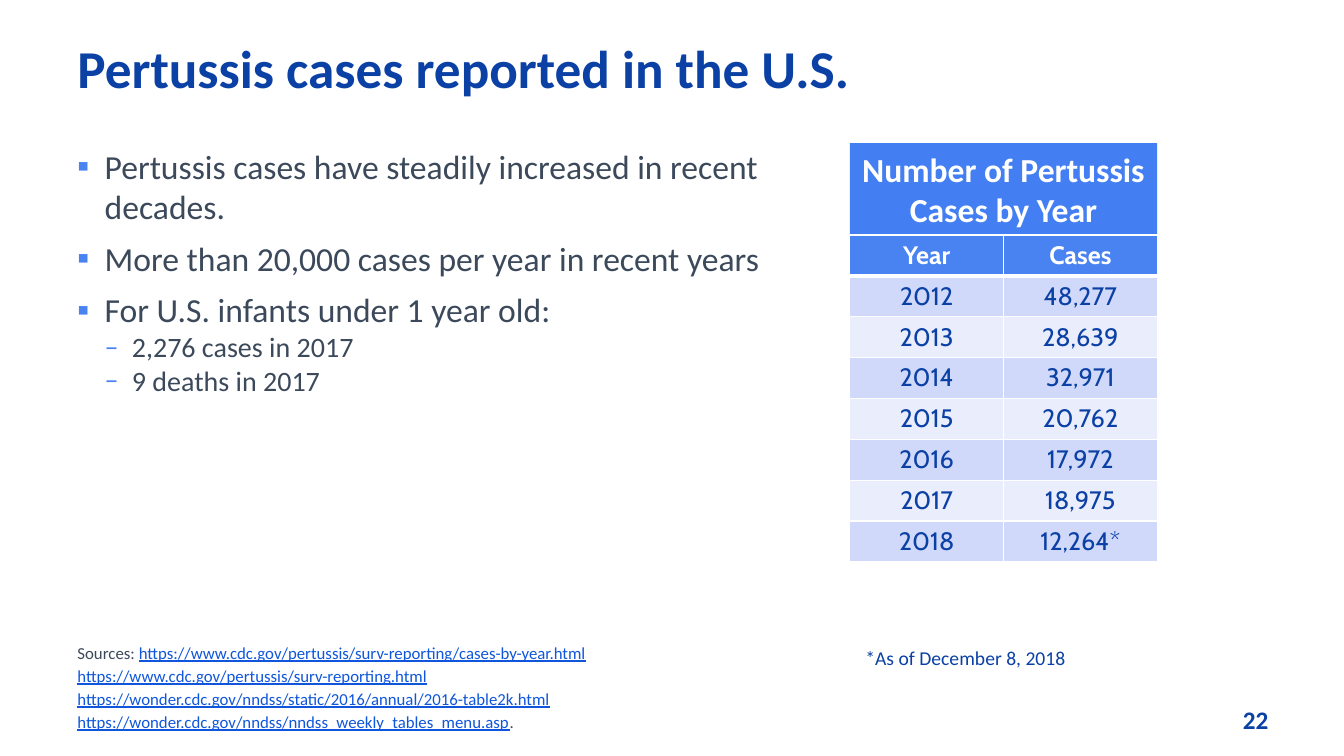
from pptx import Presentation
from pptx.dml.color import RGBColor
from pptx.enum.shapes import MSO_SHAPE
from pptx.enum.text import MSO_ANCHOR, PP_ALIGN
from pptx.oxml import parse_xml
from pptx.oxml.ns import nsdecls
from pptx.util import Pt

NAVY = RGBColor(0x0B, 0x40, 0xA5)
SLATE = RGBColor(0x3B, 0x49, 0x5B)
LINK = RGBColor(0x0F, 0x56, 0xDC)
BAND = RGBColor(0x43, 0x7F, 0xF2)
BLUE = RGBColor(0x49, 0x83, 0xF2)
DARK = RGBColor(0xD0, 0xD9, 0xFA)
PALE = RGBColor(0xE9, 0xED, 0xFC)
WHITE = RGBColor(0xFF, 0xFF, 0xFF)

POINTS = [
    (0, "Pertussis cases have steadily increased in recent decades."),
    (0, "More than 20,000 cases per year in recent years"),
    (0, "For U.S. infants under 1 year old:"),
    (1, "2,276 cases in 2017"),
    (1, "9 deaths in 2017"),
]
SOURCES = [
    ("Sources: ", "https://www.cdc.gov/pertussis/surv-reporting/cases-by-year.html", ""),
    ("", "https://www.cdc.gov/pertussis/surv-reporting.html", ""),
    ("", "https://wonder.cdc.gov/nndss/static/2016/annual/2016-table2k.html", ""),
    ("", "https://wonder.cdc.gov/nndss/nndss_weekly_tables_menu.asp", "."),
]
CASES = [
    ("Year", "Cases"),
    ("2012", "48,277"),
    ("2013", "28,639"),
    ("2014", "32,971"),
    ("2015", "20,762"),
    ("2016", "17,972"),
    ("2017", "18,975"),
    ("2018", "12,264*"),
]


def style(run, size, color, bold=False, face="Calibri"):
    font = run.font
    font.name, font.size, font.bold = face, Pt(size), bold
    font.color.rgb = color


def add_box(slide, x, y, w, h):
    frame = slide.shapes.add_textbox(Pt(x), Pt(y), Pt(w), Pt(h)).text_frame
    frame.word_wrap = True
    return frame


def add_line(slide, box, text, size, color, bold=False, align=PP_ALIGN.LEFT):
    frame = add_box(slide, *box)
    frame.text = text
    para = frame.paragraphs[0]
    para.alignment = align
    style(para.runs[0], size, color, bold)


def add_bullet(para, level):
    props = para._p.get_or_add_pPr()
    props.set("marL", str(Pt(19.44 * (level + 1))))
    props.set("indent", str(-Pt(19.44)))
    for tag in (
        f'<a:buClr {nsdecls("a")}><a:srgbClr val="{BLUE}"/></a:buClr>',
        f'<a:buFont {nsdecls("a")} typeface="Calibri"/>',
        f'<a:buChar {nsdecls("a")} char="{"▪–"[level]}"/>',
    ):
        props.append(parse_xml(tag))


def add_points(slide, x, y, w, h):
    frame = add_box(slide, x, y, w, h)
    for i, (level, text) in enumerate(POINTS):
        para = frame.add_paragraph() if i else frame.paragraphs[0]
        para.text, para.level = text, level
        para.space_before = Pt(8 if i and not level else 0)
        add_bullet(para, level)
        style(para.runs[0], 20 if level else 24, SLATE)


def add_sources(slide, x, y, w, h):
    frame = add_box(slide, x, y, w, h)
    for i, parts in enumerate(SOURCES):
        para = frame.add_paragraph() if i else frame.paragraphs[0]
        para.space_before = Pt(2 if i else 0)
        for text in filter(None, parts):
            run = para.add_run()
            run.text = text
            link = text.startswith("https")
            style(run, 12, LINK if link else SLATE)
            run.font.underline = link


def add_edges(cell, row):
    props = cell._tc.get_or_add_tcPr()
    heavy = {"lnB": row == 0, "lnT": row == 1}
    for side in ("lnL", "lnR", "lnT", "lnB"):
        width = Pt(3 if heavy.get(side) else 1)
        props.append(parse_xml(
            f'<a:{side} {nsdecls("a")} w="{width}"><a:solidFill>'
            f'<a:srgbClr val="{WHITE}"/></a:solidFill></a:{side}>'))


def add_cases(slide, x, y, w, head, step):
    # Heading band
    band = slide.shapes.add_shape(
        MSO_SHAPE.RECTANGLE, Pt(x), Pt(y), Pt(w), Pt(head))
    band.shadow.inherit = False
    band.fill.solid()
    band.fill.fore_color.rgb = BAND
    band.line.fill.background()
    frame = band.text_frame
    frame.word_wrap = True
    frame.vertical_anchor = MSO_ANCHOR.MIDDLE
    frame.text = "Number of Pertussis Cases by Year"
    frame.paragraphs[0].alignment = PP_ALIGN.CENTER
    style(frame.paragraphs[0].runs[0], 24, WHITE, True)

    # Yearly counts
    count = len(CASES)
    table = slide.shapes.add_table(
        count, 2, Pt(x), Pt(y + head), Pt(w), Pt(step * count)).table
    table.first_row = table.horz_banding = False
    for col in table.columns:
        col.width = Pt(w / 2)
    for r, values in enumerate(CASES):
        table.rows[r].height = Pt(step)
        for c, value in enumerate(values):
            cell = table.cell(r, c)
            add_edges(cell, r)
            cell.fill.solid()
            cell.fill.fore_color.rgb = (PALE, DARK)[r % 2] if r else BLUE
            cell.text = value
            para = cell.text_frame.paragraphs[0]
            para.alignment = PP_ALIGN.CENTER
            style(para.runs[0], 18, NAVY if r else WHITE, r == 0, "Cabin")


def build():
    deck = Presentation()
    deck.slide_width, deck.slide_height = Pt(960), Pt(540)
    slide = deck.slides.add_slide(deck.slide_layouts[6])
    left, right = 48.24, 607

    # Title and text column
    add_line(slide, (left, 21.6, 864, 60),
             "Pertussis cases reported in the U.S.", 38, NAVY, True)
    add_points(slide, left, 100.8, 505.5, 340)
    add_sources(slide, left, 455.5, 505.5, 72)

    # Table column
    add_cases(slide, right, 102.2, 219.6, 65.6, 29.2)
    add_line(slide, (right, 458, 161.3, 24.5),
             "*As of December 8, 2018", 14, NAVY, align=PP_ALIGN.RIGHT)

    # Page number
    add_line(slide, (880.6, 499.7, 60, 29), "22", 18, NAVY, True)
    deck.save("out.pptx")


if __name__ == "__main__":
    build()
